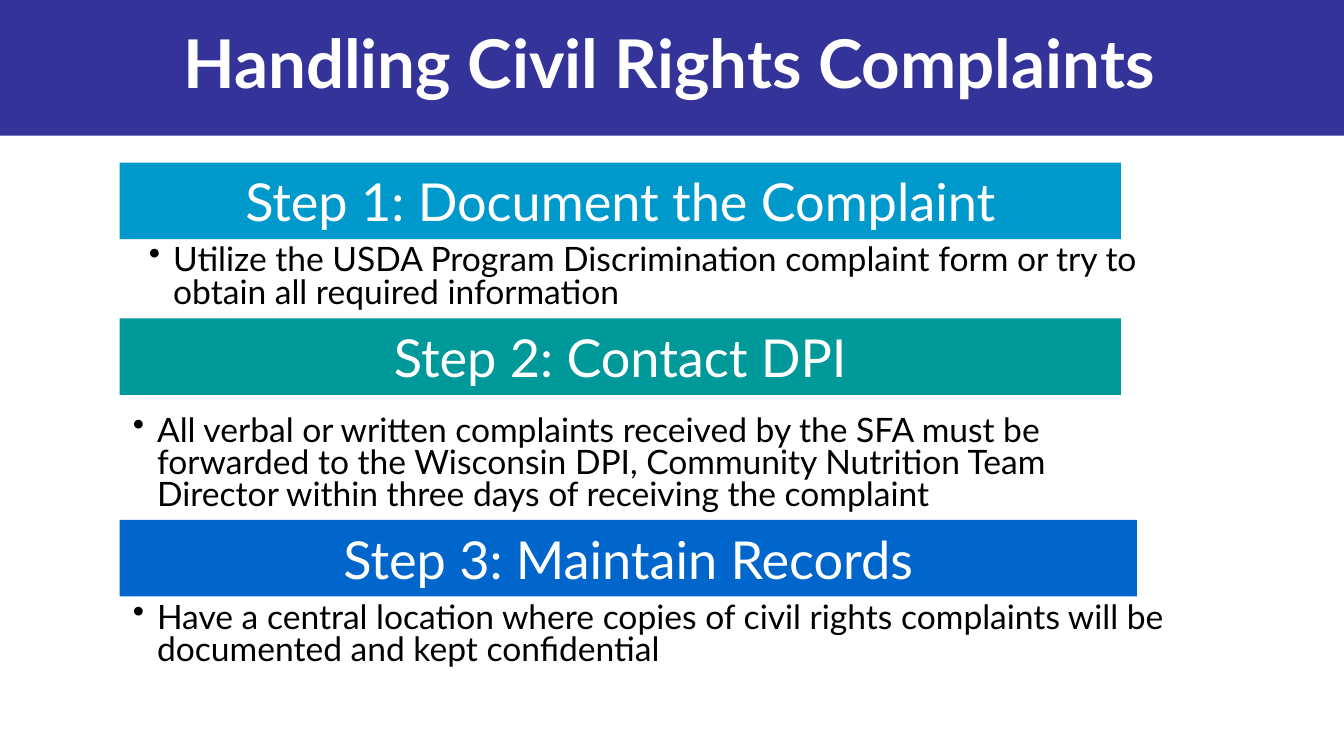
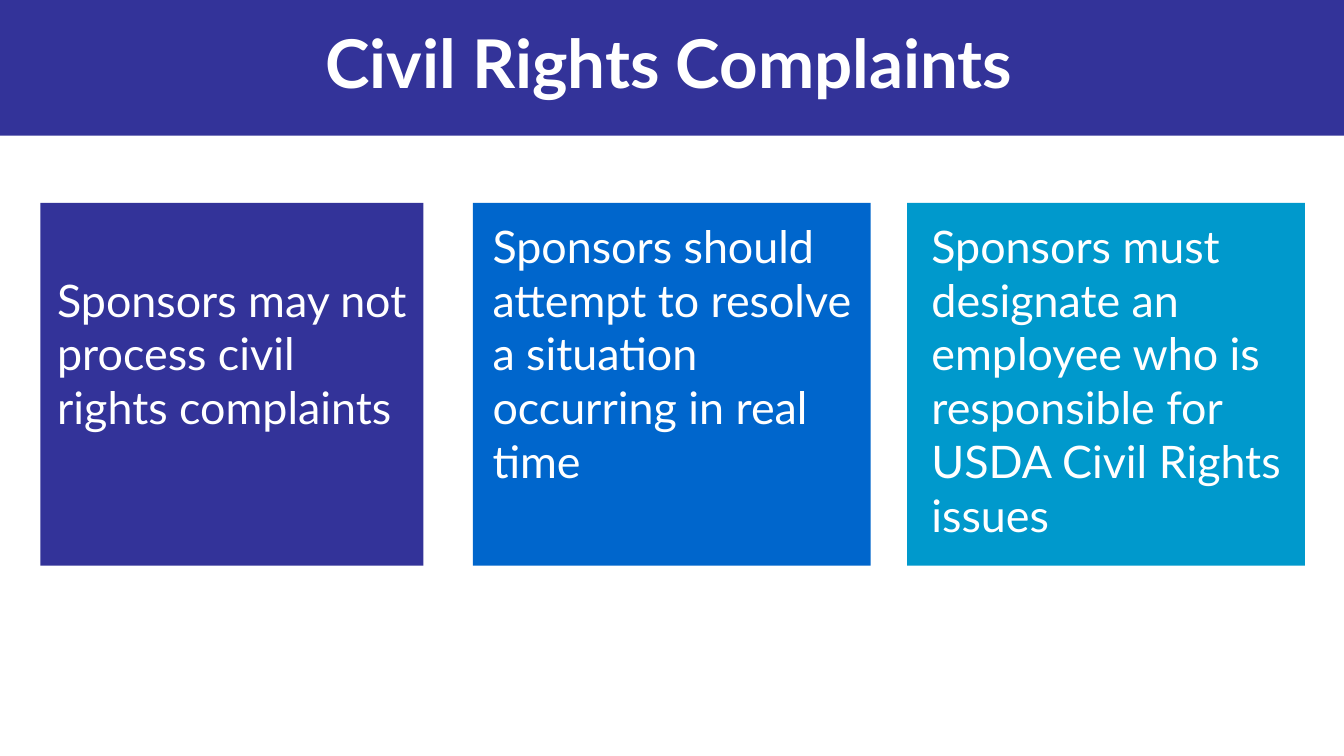
from lxml.etree import SubElement
from pptx import Presentation
from pptx.dml.color import RGBColor
from pptx.enum.shapes import MSO_SHAPE
from pptx.enum.text import MSO_ANCHOR, MSO_AUTO_SIZE, PP_ALIGN
from pptx.oxml.ns import qn
from pptx.util import Pt

FONT = "Lato"
COLOURS = {
    "indigo": "333399",
    "sky": "0099CC",
    "teal": "009999",
    "blue": "0066CC",
    "white": "FFFFFF",
    "black": "000000",
}

STEPS_TITLE = "Handling Civil Rights Complaints"
STEPS = [
    {
        "heading": "Step 1: Document the Complaint",
        "colour": "sky", "top": 87.1, "width": 536.4,
        "detail": "Utilize the USDA Program Discrimination complaint form or try to "
                  "obtain all required information",
        "detail_box": (72.7, 128.2, 583.2, 49),
    },
    {
        "heading": "Step 2: Contact DPI",
        "colour": "teal", "top": 170.6, "width": 536.4,
        "detail": "All verbal or written complaints received by the SFA must be forwarded "
                  "to the Wisconsin DPI, Community Nutrition Team Director within three "
                  "days of receiving the complaint",
        "detail_box": (64.1, 219.6, 527, 57.6),
    },
    {
        "heading": "Step 3: Maintain Records",
        "colour": "blue", "top": 278.6, "width": 545,
        "detail": "Have a central location where copies of civil rights complaints will be "
                  "documented and kept confidential",
        "detail_box": (64.1, 319.7, 583.2, 57.6),
    },
]
STEP_LEFT, STEP_HEIGHT = 64.1, 41

DUTIES_TITLE = "Civil Rights Complaints"
DUTIES = [
    {"text": "Sponsors may not process civil rights complaints",
     "colour": "indigo", "left": 21.6, "width": 205.2, "indent": 9, "lift": 33.6},
    {"text": "Sponsors should attempt to resolve a situation occurring in real time",
     "colour": "blue", "left": 253.4, "width": 213.1, "indent": 10.5, "lift": 33.6},
    {"text": "Sponsors must designate an employee who is responsible for USDA Civil Rights issues",
     "colour": "sky", "left": 486, "width": 213.1, "indent": 13, "lift": 4.8},
]
DUTY_TOP, DUTY_HEIGHT = 108.7, 194.4


def rgb(colour):
    return RGBColor.from_string(COLOURS[colour])


def write(shape, text, size, colour="white", bold=False, align=PP_ALIGN.LEFT,
          anchor=MSO_ANCHOR.MIDDLE, spacing=None, after=None, bullet=None,
          insets=(7.2, 3.6, 7.2, 3.6)):
    frame = shape.text_frame
    frame.word_wrap = True
    frame.auto_size = MSO_AUTO_SIZE.NONE
    frame.vertical_anchor = anchor
    (frame.margin_left, frame.margin_top,
     frame.margin_right, frame.margin_bottom) = map(Pt, insets)
    paragraph = frame.paragraphs[0]
    paragraph.alignment = align
    if spacing:
        paragraph.line_spacing = spacing
    if after:
        paragraph.space_after = Pt(after)
    if bullet:
        properties = paragraph._p.get_or_add_pPr()
        properties.set("marL", str(Pt(13)))
        properties.set("indent", str(-Pt(13)))
        SubElement(properties, qn("a:buChar"), char=bullet)
    run = paragraph.add_run()
    run.text = text
    run.font.name = FONT
    run.font.size = Pt(size)
    run.font.bold = bold
    run.font.color.rgb = rgb(colour)


def add_block(slide, box, colour):
    block = slide.shapes.add_shape(MSO_SHAPE.RECTANGLE, *map(Pt, box))
    block.shadow.inherit = False
    block.fill.solid()
    block.fill.fore_color.rgb = rgb(colour)
    block.line.fill.background()
    return block


def add_titled_slide(deck, heading):
    slide = deck.slides.add_slide(deck.slide_layouts[5])
    title = slide.shapes.title
    title.left, title.top, title.width, title.height = map(Pt, (48.2, 0, 620.6, 72))
    write(title, heading, 36, bold=True, align=PP_ALIGN.CENTER, spacing=0.9)
    return slide


def share_title_band(deck, slide):
    band = add_block(slide, (-0.7, 0, 720.7, 72.7), "indigo")
    deck.slide_master.shapes.element.insert(2, band.element)


def add_steps(slide):
    for step in STEPS:
        banner = add_block(slide, (STEP_LEFT, step["top"], step["width"], STEP_HEIGHT),
                           step["colour"])
        write(banner, step["heading"], 28, align=PP_ALIGN.CENTER)
        detail = slide.shapes.add_textbox(*map(Pt, step["detail_box"]))
        write(detail, step["detail"], 18, colour="black", anchor=MSO_ANCHOR.TOP,
              spacing=0.8, after=30, bullet="•")


def add_duties(slide):
    for duty in DUTIES:
        card = add_block(slide, (duty["left"], DUTY_TOP, duty["width"], DUTY_HEIGHT),
                         duty["colour"])
        write(card, duty["text"], 24,
              insets=(duty["indent"], 3.6, 7.2, 3.6 + duty["lift"]))


def main():
    deck = Presentation()
    deck.slide_width, deck.slide_height = Pt(720), Pt(405)
    steps_slide = add_titled_slide(deck, STEPS_TITLE)
    share_title_band(deck, steps_slide)
    add_steps(steps_slide)
    add_duties(add_titled_slide(deck, DUTIES_TITLE))
    deck.save("out.pptx")


if __name__ == "__main__":
    main()
